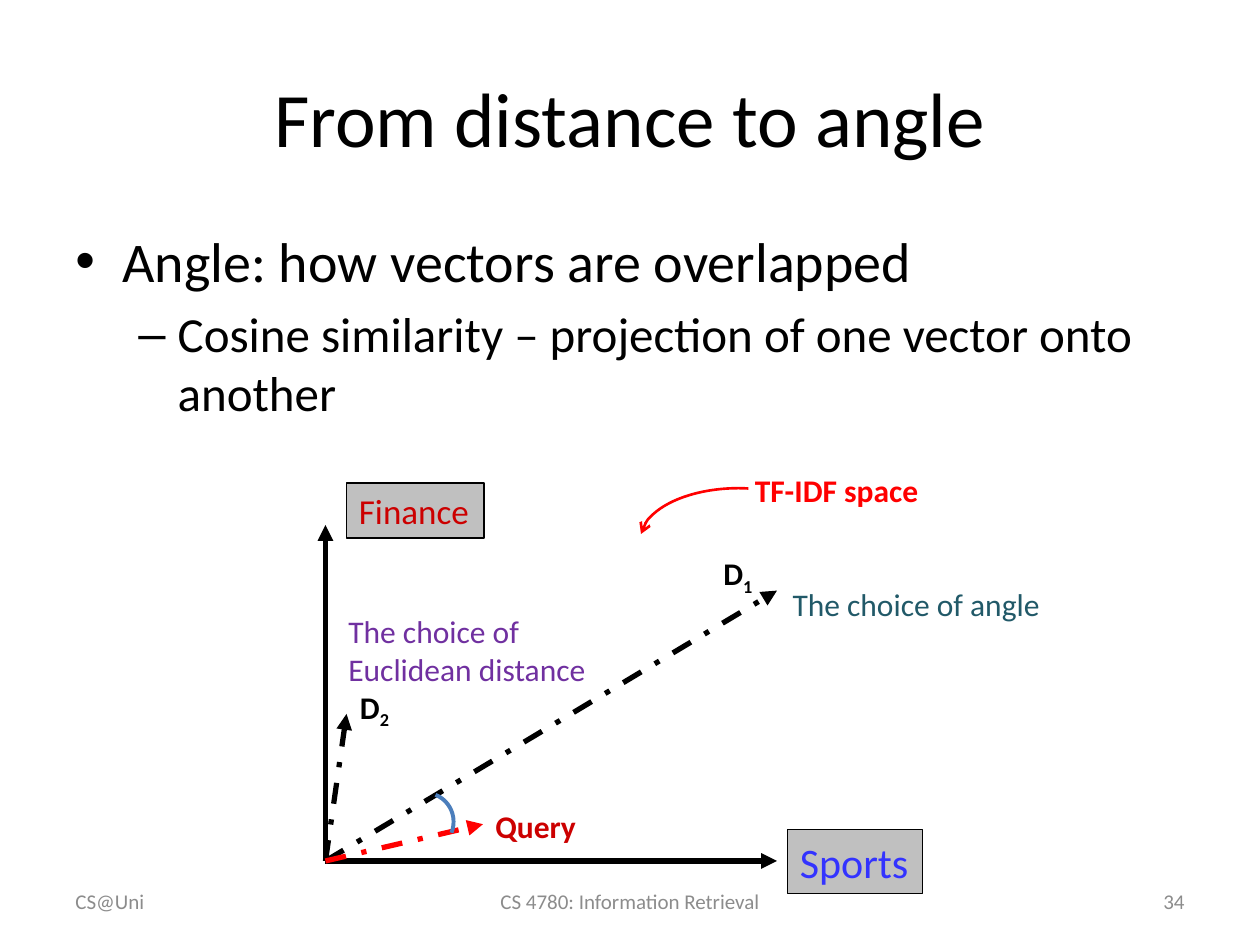
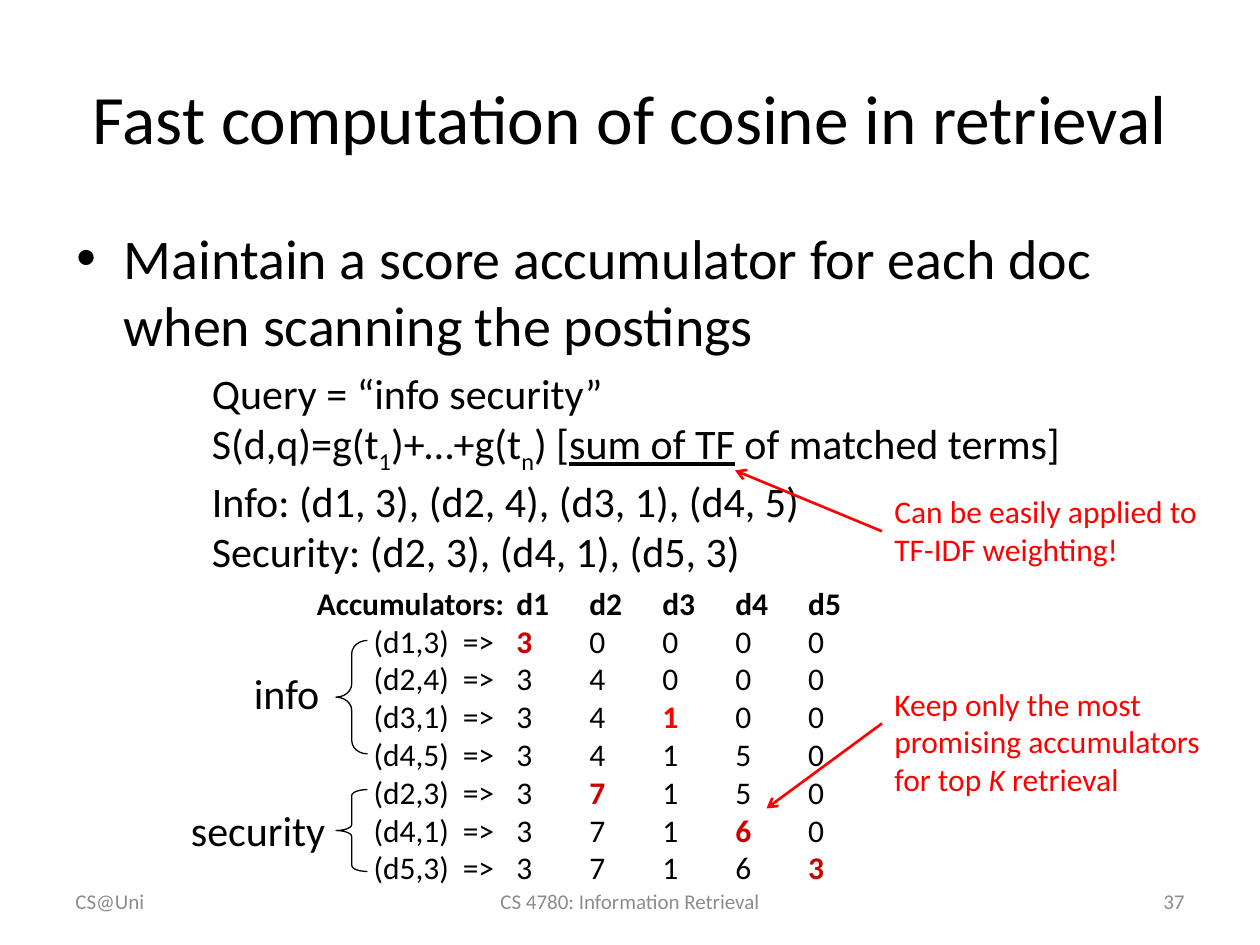
import pptx
import pptx.util
import pptx.dml.color
import pptx.enum.dml
import pptx.enum.shapes
import pptx.enum.text
import pptx.oxml
import pptx.oxml.ns

Pt = pptx.util.Pt
RGB = pptx.dml.color.RGBColor.from_string
Shape = pptx.enum.shapes.MSO_SHAPE
Align = pptx.enum.text.PP_ALIGN
Anchor = pptx.enum.text.MSO_ANCHOR
NS = pptx.oxml.ns.nsdecls("a")

hues = {
    "black": "000000", "grey": "C0C0C0", "foot": "8C8C8C", "red": "FF0000",
    "dark": "CC0000", "blue": "3333FF", "arc": "4B7EBC", "teal": "215968",
    "plum": "7030A0",
}
aligns = {"l": Align.LEFT, "c": Align.CENTER, "r": Align.RIGHT}

deck = pptx.Presentation()
deck.slide_width = pptx.util.Inches(10)
deck.slide_height = pptx.util.Inches(7.5)
cell = deck.slide_width // 120


def put(slide, box, lines, size=18, hue="black", bold=False, align="l",
        mid=False, wrap=True, fill=None, marks=(), tabs=()):
    spots = [round(n * cell) for n in box]
    if fill:
        item = slide.shapes.add_shape(Shape.RECTANGLE, *spots)
        item.shadow.inherit = False
        item.fill.solid()
        item.fill.fore_color.rgb = RGB(hues[fill])
        item.line.color.rgb = RGB(hues["black"])
        item.line.width = Pt(0.75)
    else:
        item = slide.shapes.add_textbox(*spots)
    frame = item.text_frame
    frame.word_wrap = wrap
    frame.vertical_anchor = Anchor.MIDDLE if mid else Anchor.TOP
    for row, line in enumerate([lines] if isinstance(lines, str) else lines):
        para = frame.add_paragraph() if row else frame.paragraphs[0]
        para.alignment = aligns[align]
        props = para._p.get_or_add_pPr()
        if marks:
            mark, left, hang, high = marks[row]
            para.space_before = Pt(0.2 * high)
            props.set("marL", str(round(left * cell)))
            props.set("indent", str(round(-hang * cell)))
            for part in (f'<a:buFont {NS} typeface="Arial"/>',
                         f'<a:buChar {NS} char="{mark}"/>'):
                props.append(pptx.oxml.parse_xml(part))
        if tabs:
            stops = "".join(f'<a:tab pos="{round(t * cell)}" algn="l"/>' for t in tabs)
            props.append(pptx.oxml.parse_xml(f"<a:tabLst {NS}>{stops}</a:tabLst>"))
        for run in [line] if isinstance(line, str) else line:
            words, look = (run, {}) if isinstance(run, str) else run
            bit = para.add_run()
            bit.text = words
            font = bit.font
            font.name = "Calibri"
            font.size = Pt(look.get("size", size))
            font.bold = look.get("bold", bold)
            font.italic = look.get("slant")
            font.underline = look.get("under")
            font.color.rgb = RGB(hues[look.get("hue", hue)])
            if look.get("sub"):
                bit._r.get_or_add_rPr().set("baseline", "-25000")


def draw(item, hue, width, head=None, tail=None, dash=False):
    item.line.color.rgb = RGB(hues[hue])
    item.line.width = Pt(width)
    if dash:
        item.line.dash_style = pptx.enum.dml.MSO_LINE.DASH_DOT
    line = item.line._get_or_add_ln()
    for end, kind in (("headEnd", head), ("tailEnd", tail)):
        if kind:
            line.append(pptx.oxml.parse_xml(f'<a:{end} {NS} type="{kind}"/>'))
    item._element.spPr.append(pptx.oxml.parse_xml(f"<a:effectLst {NS}/>"))


sub = {"sub": True}
pages = []
for title, size, num in (
    ("From distance to angle", 44, "34"),
    ("Fast computation of cosine in retrieval", 39.6, "37"),
):
    page = deck.slides.add_slide(deck.slide_layouts[6])
    put(page, (6, 3.6, 108, 15), title, size=size, align="c", mid=True)
    for left, wide, words, align in (
        (6, 28, "CS@Uni", "l"),
        (41, 38, "CS 4780: Information Retrieval", "c"),
        (86, 28, num, "r"),
    ):
        put(page, (left, 83.4, wide, 4.8), words, size=12, hue="foot", align=align, mid=True)
    pages.append(page)
angle, fast = pages
dot = ("•", 4.5, 4.5, 32)

put(angle, (6, 21, 108, 59.4), [
    "Angle: how vectors are overlapped",
    [("Cosine similarity – projection of one vector onto another", {"size": 28})],
], size=32, marks=[dot, ("–", 9.75, 3.75, 28)])

for box, words, size, hue in (
    ((75, 79, 12.84, 6.1), "Sports", 24, "blue"),
    ((33, 46, 13.1, 5.25), "Finance", 20, "dark"),
):
    put(angle, box, words, size=size, hue=hue, wrap=False, fill="grey", mid=True)

for right, top, hue, dash in (
    (74, 82, "black", False), (31, 50, "black", False),
    (74, 56.25, "black", True), (33, 68, "black", True), (46, 78.5, "red", True),
):
    ends = [round(n * cell) for n in (31, 82, right, top)]
    draw(angle.shapes.add_connector(1, *ends), hue, 3, tail="triangle", dash=dash)

for box, words, hue, bold, wrap in (
    ((67.7, 52.2, 5.4, 4.8), [["D", ("1", sub)]], "black", True, False),
    ((33.1, 64.9, 5.6, 4.8), [["D", ("2", sub)]], "black", True, False),
    ((46, 76.3, 10.6, 4.8), "Query", "dark", True, False),
    ((70.7, 44.3, 26, 4.8), "TF-IDF space", "red", True, True),
    ((74.3, 55.1, 29.3, 4.8), "The choice of angle", "teal", False, True),
    ((32, 57.7, 29.3, 8.5), "The choice of Euclidean distance", "plum", False, True),
):
    put(angle, box, words, hue=hue, bold=bold, wrap=wrap)

for page, kind, box, turn, bends, hue, width, head in (
    (angle, Shape.ARC, (61, 46.5, 18.7, 9.75), 0, (109.91, 168.48), "red", 1.5, "arrow"),
    (angle, Shape.ARC, (37.7, 75.5, 5.5, 5.6), 21.7, (), "arc", 2.25, None),
    (fast, Shape.LEFT_BRACE, (32, 61, 3, 10.8), 0, (0.42, 0.5), "black", 0.75, None),
    (fast, Shape.LEFT_BRACE, (32, 75.2, 3, 7.8), 0, (0.19, 0.5), "black", 0.75, None),
):
    curve = page.shapes.add_shape(kind, *[round(n * cell) for n in box])
    curve.fill.background()
    curve.rotation = turn
    for spot, bend in enumerate(bends):
        curve.adjustments[spot] = bend
    draw(curve, hue, width, head=head)

put(fast, (6.1, 20.65, 108, 59.4),
    "Maintain a score accumulator for each doc when scanning the postings",
    size=32, marks=[dot])
put(fast, (19, 34.4, 84.2, 20.6), [
    "Query = “info security”",
    ["S(d,q)=g(t", ("1", sub), ")+…+g(t", ("n", sub), ") [",
     ("sum of TF", {"under": True}), " of matched terms]"],
    "Info: (d1, 3), (d2, 4), (d3, 1), (d4, 5)",
    "Security: (d2, 3), (d4, 1), (d5, 3)",
], size=24, wrap=False)

sums = [0] * 5
rows = [[("Accumulators:" + "".join(f"\td{n}" for n in range(1, 6)), {"bold": True})]]
for doc, count, hue in (
    (1, 3, "dark"), (2, 4, None), (3, 1, "red"), (4, 5, None),
    (2, 3, "dark"), (4, 1, "dark"), (5, 3, "dark"),
):
    sums[doc - 1] += count
    row = [f"\t(d{doc},{count})\t=>"]
    for spot, total in enumerate(sums, 1):
        look = {"hue": hue, "bold": True} if hue and spot == doc else {}
        row.append((f"\t{total}", look))
    rows.append(row)
put(fast, (29, 55, 53.5, 34), rows,
    tabs=[5.4, 13.9] + [19 + 6.95 * n for n in range(5)])

for box, words in (((23, 63, 8.9, 6), "info"), ((17, 76, 16.8, 6), "security")):
    put(fast, box, words, size=24, wrap=False)

for top, high, lines, ends in (
    (46.3, 8.5, "Can be easily applied to TF-IDF weighting!", (84, 50.6, 70, 44.8)),
    (64.6, 12.1, [["Keep only the most promising accumulators for top ",
                   ("K", {"slant": True}), " retrieval"]], (84, 68.9, 73, 77)),
):
    put(fast, (84, top, 33, high), lines, hue="red")
    line = fast.shapes.add_connector(1, *[round(n * cell) for n in ends])
    draw(line, "red", 1.5, tail="arrow")

deck.save("out.pptx")
